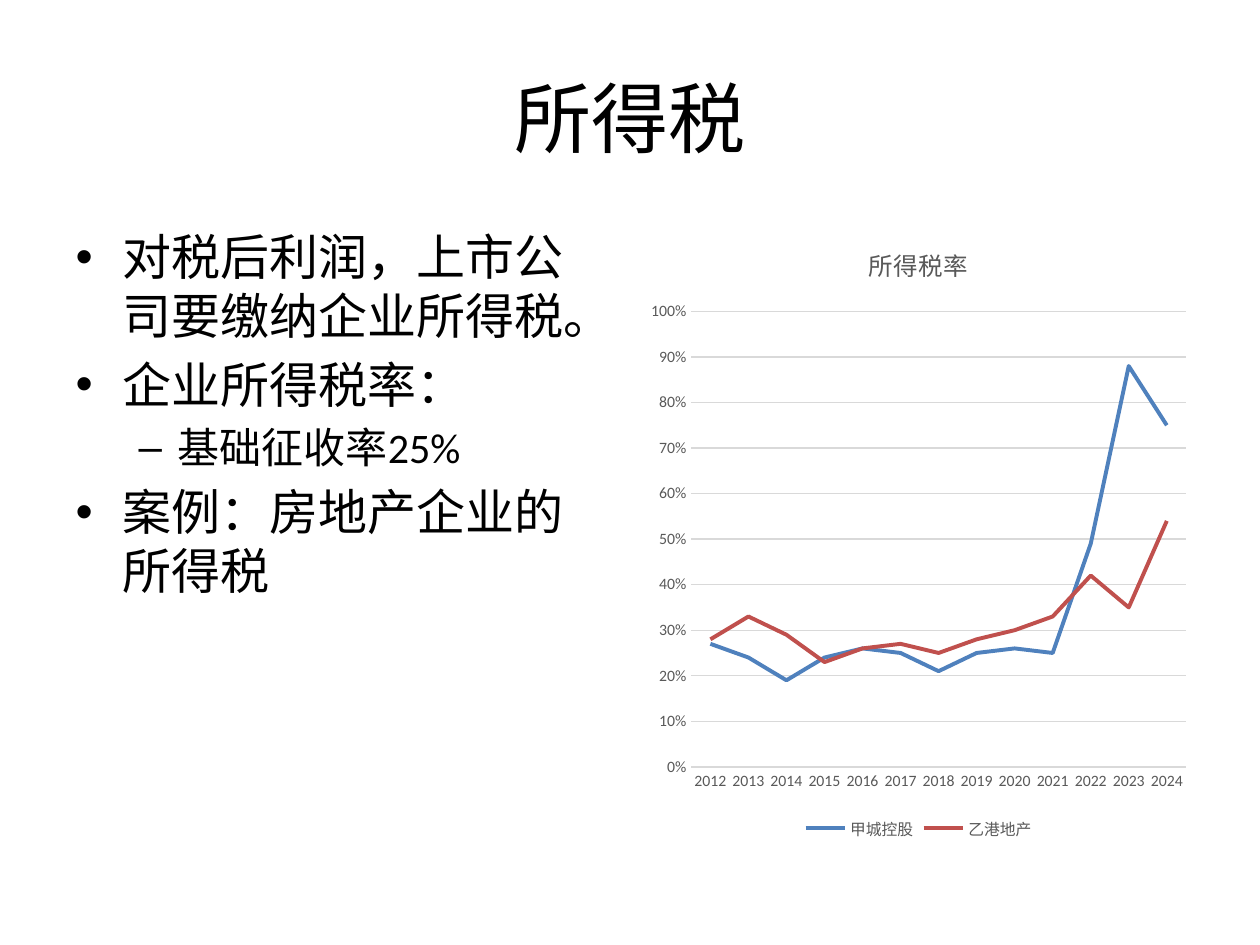
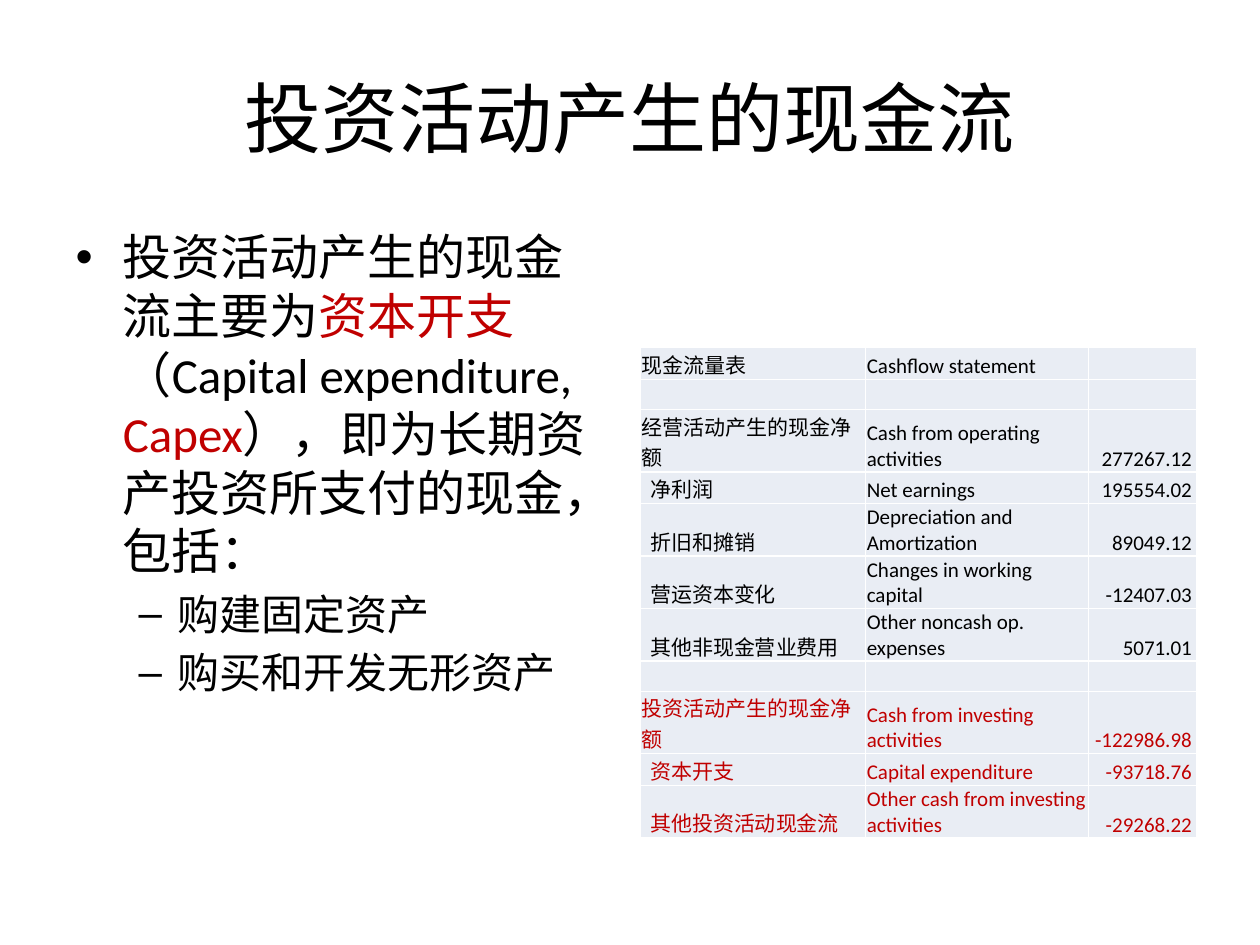
from pptx import Presentation
from pptx.chart.data import CategoryChartData
from pptx.dml.color import RGBColor
from pptx.enum.chart import XL_CHART_TYPE, XL_LEGEND_POSITION, XL_TICK_MARK
from pptx.enum.text import MSO_ANCHOR, PP_ALIGN
from pptx.oxml.ns import qn
from pptx.util import Inches, Pt
from lxml.etree import SubElement

COLORS = {
    "text": "000000",
    "accent": "C00000",
    "muted": "595959",
    "grid": "D9D9D9",
    "cell": "E9EDF4",
    "first line": "4F81BD",
    "second line": "C0504D",
}
FONT = "Calibri"
TITLE_BOX = (0.5, 0.3, 9, 1.25)
LEFT_BOX = (0.5, 1.75, 4.42, 4.95)
RIGHT_BOX = (5.08, 1.75, 4.42, 4.95)
TABLE_BOX = (5.08, 2.76, 4.42, 3.48)
LEVEL_SIZES = (28, 24)

TAX_POINTS = [
    (0, [("对税后利润，上市公司要缴纳企业所得税。", "text")]),
    (0, [("企业所得税率：", "text")]),
    (1, [("基础征收率25%", "text")]),
    (0, [("案例：房地产企业的所得税", "text")]),
]
INVESTING_POINTS = [
    (0, [
        ("投资活动产生的现金流主要为", "text"),
        ("资本开支", "accent"),
        ("（Capital expenditure, ", "text"),
        ("Capex", "accent"),
        ("），即为长期资产投资所支付的现金，包括：", "text"),
    ]),
    (1, [("购建固定资产", "text")]),
    (1, [("购买和开发无形资产", "text")]),
]

YEARS = [str(year) for year in range(2012, 2025)]
TAX_RATES = [
    ("甲城控股", "first line",
     (0.27, 0.24, 0.19, 0.24, 0.26, 0.25, 0.21, 0.25, 0.26, 0.25, 0.49, 0.88, 0.75)),
    ("乙港地产", "second line",
     (0.28, 0.33, 0.29, 0.23, 0.26, 0.27, 0.25, 0.28, 0.3, 0.33, 0.42, 0.35, 0.54)),
]

# Each row: indent level, colour, Chinese label, English label, amount
CASHFLOW_ROWS = [
    (0, "text", "现金流量表", "Cashflow statement", ""),
    (0, "text", "", "", ""),
    (0, "text", "经营活动产生的现金净额", "Cash from operating activities", "277267.12"),
    (1, "text", "净利润", "Net earnings", "195554.02"),
    (1, "text", "折旧和摊销", "Depreciation and Amortization", "89049.12"),
    (1, "text", "营运资本变化", "Changes in working capital", "-12407.03"),
    (1, "text", "其他非现金营业费用", "Other noncash op. expenses", "5071.01"),
    (0, "text", "", "", ""),
    (0, "accent", "投资活动产生的现金净额", "Cash from investing activities", "-122986.98"),
    (1, "accent", "资本开支", "Capital expenditure", "-93718.76"),
    (1, "accent", "其他投资活动现金流", "Other cash from investing activities", "-29268.22"),
]
COLUMN_WIDTHS = (1.79, 1.77, 0.86)
ROW_HEIGHT, WRAPPED_ROW_HEIGHT = 0.24, 0.41
ENGLISH_LINE_LENGTH = 22


def set_attributes(target, values):
    for name, value in values.items():
        setattr(target, name, value)


def rgb(color):
    return RGBColor.from_string(COLORS[color])


def format_font(font, size, color):
    set_attributes(font, {"name": FONT, "size": Pt(size), "bold": False})
    font.color.rgb = rgb(color)


def format_line(line, color, width):
    line.color.rgb = rgb(color)
    line.width = Pt(width)


def place(shape, box):
    set_attributes(shape, dict(zip(("left", "top", "width", "height"), map(Inches, box))))


def add_run(paragraph, text, size, color):
    run = paragraph.add_run()
    run.text = text
    format_font(run.font, size, color)


def add_content_slide(presentation, title, points):
    """Add a titled slide with a list on the left and a free right half."""
    slide = presentation.slides.add_slide(presentation.slide_layouts.get_by_name("Two Content"))
    body, spare = slide.placeholders[1], slide.placeholders[2]
    spare.element.getparent().remove(spare.element)
    place(slide.shapes.title, TITLE_BOX)
    add_run(slide.shapes.title.text_frame.paragraphs[0], title, 44, "text")
    place(body, LEFT_BOX)
    frame = body.text_frame
    for index, (level, runs) in enumerate(points):
        paragraph = frame.add_paragraph() if index else frame.paragraphs[0]
        paragraph.level = level
        for text, color in runs:
            add_run(paragraph, text, LEVEL_SIZES[level], color)
    return slide


def add_tax_rate_chart(slide, box):
    data = CategoryChartData(number_format="0%")
    data.categories = YEARS
    for name, _, rates in TAX_RATES:
        data.add_series(name, rates)
    chart = slide.shapes.add_chart(XL_CHART_TYPE.LINE, *map(Inches, box), data).chart
    format_font(chart.font, 10, "text")

    chart.has_title = True
    add_run(chart.chart_title.text_frame.paragraphs[0], "所得税率", 14, "muted")
    chart.chart_title.include_in_layout = False
    chart.has_legend = True
    set_attributes(chart.legend, {"position": XL_LEGEND_POSITION.BOTTOM,
                                  "include_in_layout": False})
    format_font(chart.legend.font, 9, "muted")

    for axis in (chart.category_axis, chart.value_axis):
        set_attributes(axis, {"major_tick_mark": XL_TICK_MARK.NONE,
                              "minor_tick_mark": XL_TICK_MARK.NONE})
        format_font(axis.tick_labels.font, 9, "muted")
    format_line(chart.category_axis.format.line, "grid", 0.75)
    value_axis = chart.value_axis
    set_attributes(value_axis, {"minimum_scale": 0, "maximum_scale": 1, "major_unit": 0.1})
    set_attributes(value_axis.tick_labels, {"number_format": "0%",
                                            "number_format_is_linked": False})
    value_axis.format.line.fill.background()
    format_line(value_axis.major_gridlines.format.line, "grid", 0.75)

    chart.plots[0].vary_by_categories = False
    for series, (_, color, _) in zip(chart.plots[0].series, TAX_RATES):
        series.smooth = False
        format_line(series.format.line, color, 2.25)


def fill_cell(cell, text, color, indent, is_amount):
    set_attributes(cell, {
        "vertical_anchor": MSO_ANCHOR.BOTTOM,
        "margin_left": Inches(0.01 + 0.07 * indent),
        "margin_right": Inches(0.04 if is_amount else 0.01),
        "margin_top": Inches(0.01),
        "margin_bottom": 0,
    })
    cell.fill.solid()
    cell.fill.fore_color.rgb = rgb("cell")
    paragraph = cell.text_frame.paragraphs[0]
    if is_amount:
        paragraph.alignment = PP_ALIGN.RIGHT
    if text:
        add_run(paragraph, text, 12, color)
    else:
        SubElement(paragraph._p, qn("a:endParaRPr"), sz="1200")


def add_cashflow_table(slide, box):
    table = slide.shapes.add_table(
        len(CASHFLOW_ROWS), len(COLUMN_WIDTHS), *map(Inches, box)).table
    set_attributes(table, {"first_row": False, "horz_banding": False})
    for column, width in zip(table.columns, COLUMN_WIDTHS):
        column.width = Inches(width)
    for row, (level, color, chinese, english, amount) in zip(table.rows, CASHFLOW_ROWS):
        wraps = len(english) > ENGLISH_LINE_LENGTH
        row.height = Inches(WRAPPED_ROW_HEIGHT if wraps else ROW_HEIGHT)
        for index, text in enumerate((chinese, english, amount)):
            fill_cell(row.cells[index], text, color, level if index == 0 else 0, index == 2)


def main():
    presentation = Presentation()
    set_attributes(presentation, {"slide_width": Inches(10), "slide_height": Inches(7.5)})
    tax_slide = add_content_slide(presentation, "所得税", TAX_POINTS)
    add_tax_rate_chart(tax_slide, RIGHT_BOX)
    investing_slide = add_content_slide(presentation, "投资活动产生的现金流", INVESTING_POINTS)
    add_cashflow_table(investing_slide, TABLE_BOX)
    presentation.save("out.pptx")


if __name__ == "__main__":
    main()
